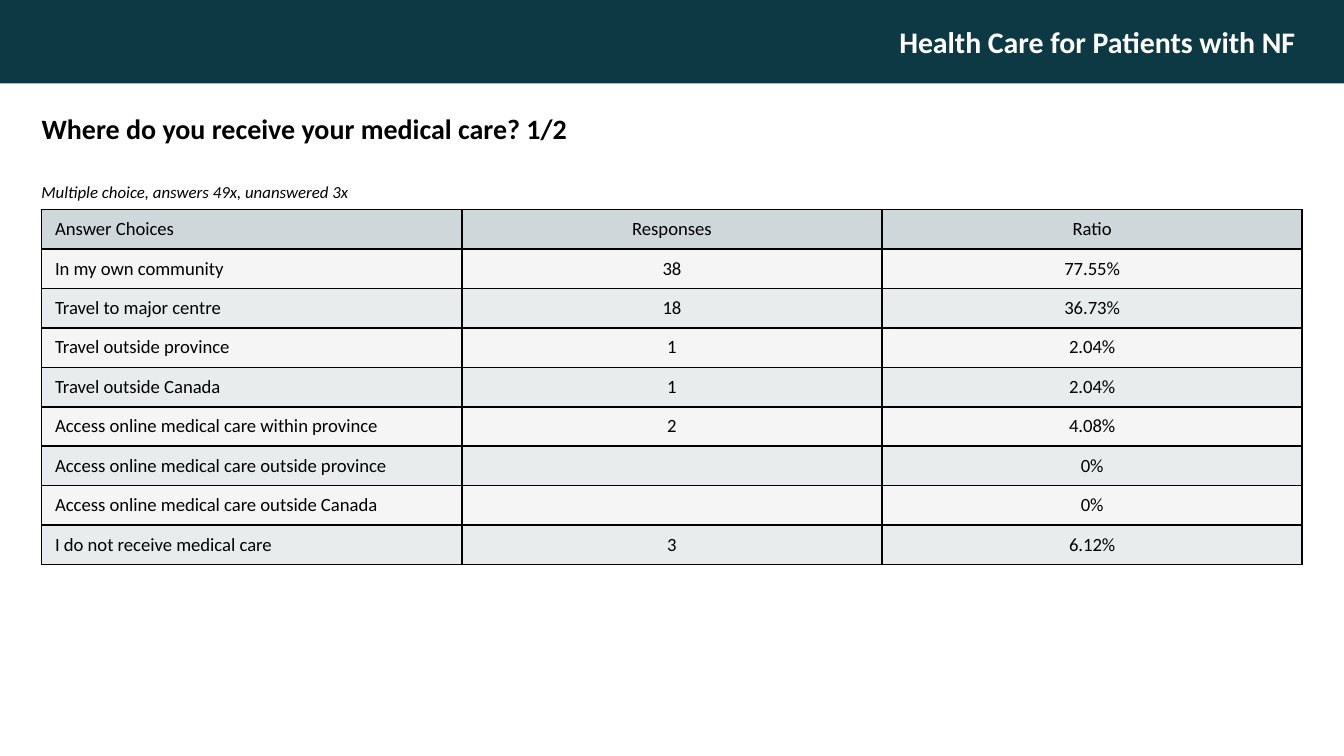
from lxml import etree
from pptx import Presentation
from pptx.dml.color import RGBColor
from pptx.enum import shapes, text
from pptx.oxml.ns import qn
from pptx.util import Inches, Pt

BLACK, WHITE, TEAL = "000000", "FFFFFF", "0D3944"
HEADER_FILL, ROW_FILLS = "CFD7DA", ("F5F5F5", "E8ECED")


def color(value):
    return RGBColor.from_string(value)


def style_text(para, size, value=BLACK, bold=False, italic=False, align=text.PP_ALIGN.LEFT):
    para.alignment = align
    for span in para.runs:
        span.font.name = "Calibri"
        span.font.size = Pt(size)
        span.font.bold = bold
        span.font.italic = italic
        span.font.color.rgb = color(value)


# Widescreen page, 16:9
deck = Presentation()
deck.slide_width = Inches(10)
deck.slide_height = Inches(10) * 9 // 16
page = deck.slides.add_slide(deck.slide_layouts[5])

# Banner across the top
banner = page.shapes.add_shape(
    shapes.MSO_SHAPE.RECTANGLE, 0, 0, Inches(10), Inches(0.62))
banner.shadow.inherit = False
banner.fill.solid()
banner.fill.fore_color.rgb = color(TEAL)
banner.line.fill.background()
banner.text_frame.text = "Health Care for Patients with NF"
banner.text_frame.margin_right = Inches(0.36)
banner.text_frame.vertical_anchor = text.MSO_ANCHOR.MIDDLE
style_text(banner.text_frame.paragraphs[0], 16, WHITE, bold=True, align=text.PP_ALIGN.RIGHT)

# Question as the slide title
title = page.shapes.title
title.left, title.top = Inches(0.21), Inches(0.78)
title.width, title.height = Inches(9.58), Inches(0.52)
title.text_frame.text = "Where do you receive your medical care? 1/2"
title.text_frame.auto_size = text.MSO_AUTO_SIZE.NONE
title.text_frame.vertical_anchor = text.MSO_ANCHOR.TOP
style_text(title.text_frame.paragraphs[0], 15, bold=True)

# Note above the table
note = page.shapes.add_textbox(Inches(0.21), Inches(1.3), Inches(4.17), Inches(0.62))
note.text_frame.word_wrap = True
note.text_frame.text = "Multiple choice, answers 49x, unanswered 3x"
style_text(note.text_frame.paragraphs[0], 9, italic=True)

# Answer table
answers = [
    ("Answer Choices", "Responses", "Ratio"),
    ("In my own community", "38", "77.55%"),
    ("Travel to major centre", "18", "36.73%"),
    ("Travel outside province", "1", "2.04%"),
    ("Travel outside Canada", "1", "2.04%"),
    ("Access online medical care within province", "2", "4.08%"),
    ("Access online medical care outside province", "", "0%"),
    ("Access online medical care outside Canada", "", "0%"),
    ("I do not receive medical care", "3", "6.12%"),
]
table = page.shapes.add_table(
    len(answers), 3, Inches(0.31), Inches(1.56), Inches(9.38), Inches(2.64)).table

for row, values in enumerate(answers):
    fill = ROW_FILLS[(row - 1) % 2] if row else HEADER_FILL
    for column, value in enumerate(values):
        cell = table.cell(row, column)
        cell.text_frame.text = value
        cell.vertical_anchor = text.MSO_ANCHOR.MIDDLE
        cell.margin_left = Inches(0 if column else 0.1)
        cell.margin_right = cell.margin_top = cell.margin_bottom = 0
        para = cell.text_frame.paragraphs[0]
        align = text.PP_ALIGN.CENTER if column else text.PP_ALIGN.LEFT
        style_text(para, 10, align=align)
        if not value:  # keeps an empty cell from stretching its row
            etree.SubElement(para._p, qn("a:endParaRPr"), sz="1000")

        # Borders come before the fill in the cell properties
        properties = cell._tc.get_or_add_tcPr()
        for side in ("a:lnL", "a:lnR", "a:lnT", "a:lnB"):
            border = etree.SubElement(properties, qn(side), w=str(Pt(1)))
            paint = etree.SubElement(border, qn("a:solidFill"))
            etree.SubElement(paint, qn("a:srgbClr"), val=BLACK)
        cell.fill.solid()
        cell.fill.fore_color.rgb = color(fill)

deck.save("out.pptx")
